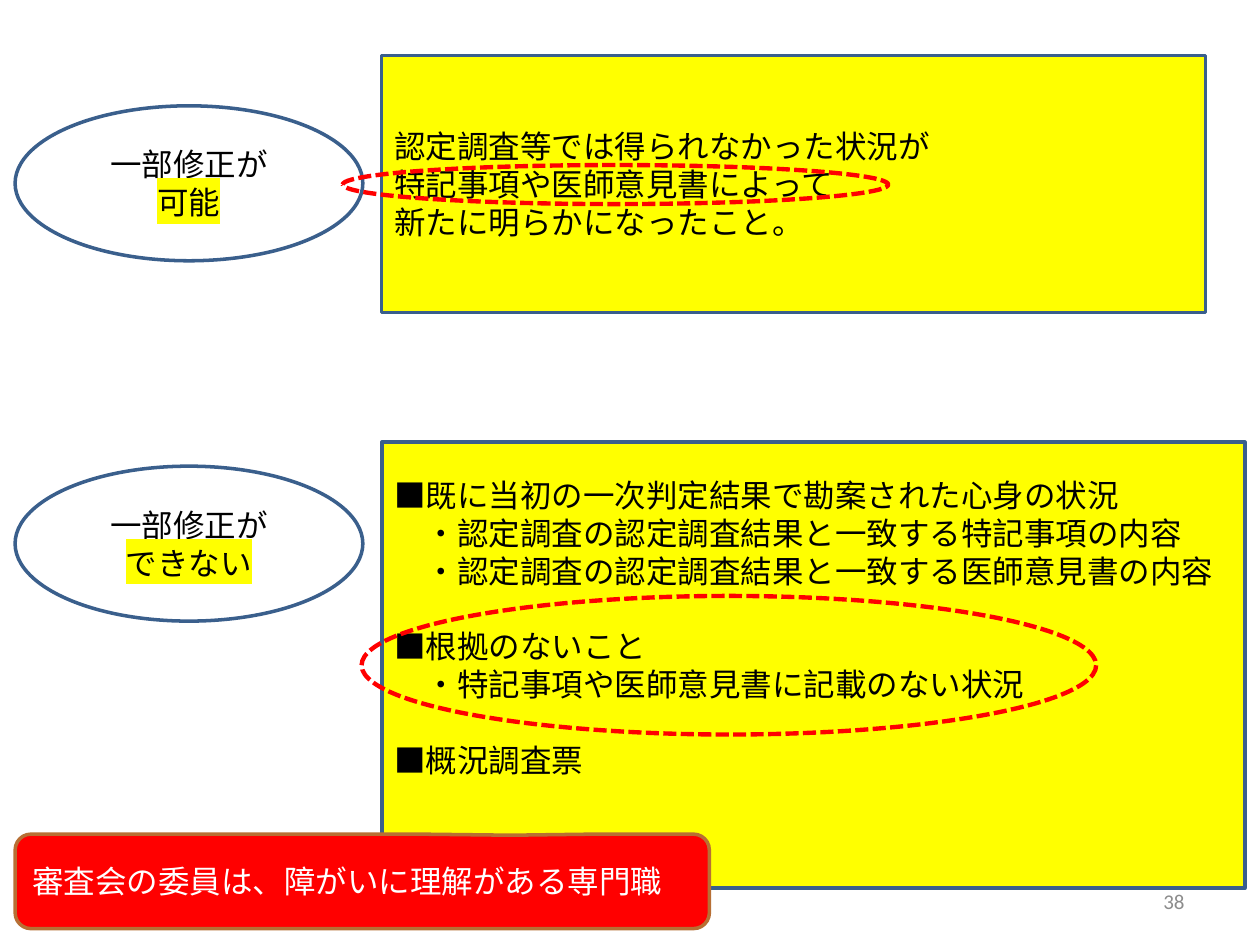
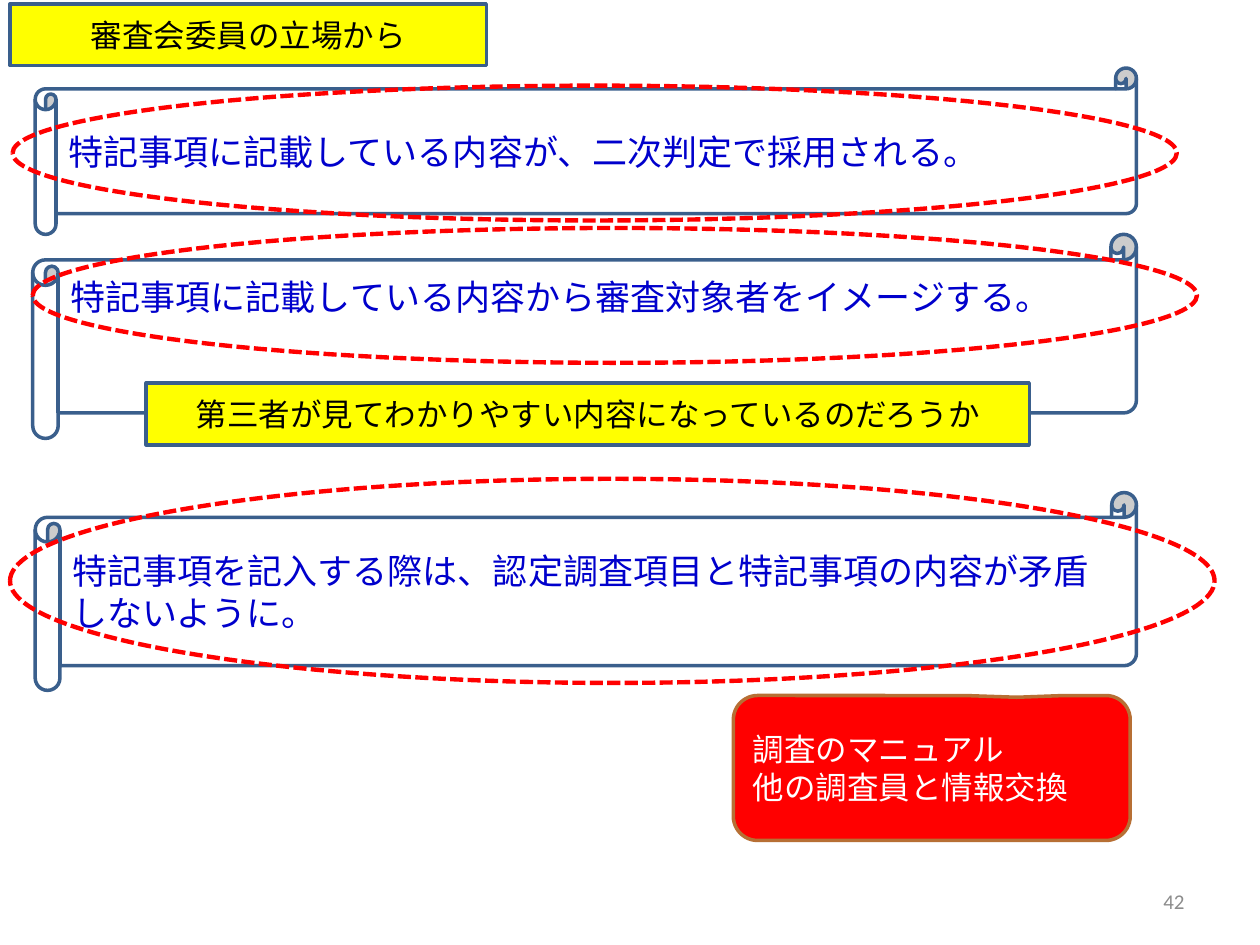
from dataclasses import dataclass

from lxml.etree import SubElement
from pptx import Presentation
from pptx.dml.color import RGBColor
from pptx.enum.dml import MSO_LINE
from pptx.enum.shapes import MSO_SHAPE as Shape
from pptx.enum.text import MSO_ANCHOR as Anchor, MSO_AUTO_SIZE as AutoSize, PP_ALIGN as Align
from pptx.oxml.ns import qn
from pptx.util import Inches, Pt

FONT = "Calibri"
COLORS = {
    "paper": "FFFFFF",
    "ink": "000000",
    "navy": "3A5F8C",
    "yellow": "FFFF00",
    "red": "FF0000",
    "brown": "B76F34",
    "blue": "0000CC",
    "gray": "8C8C8C",
}
LAYOUT_TITLE_ONLY, LAYOUT_BLANK = 5, 6
LINE_GAP = 21.6


@dataclass
class Line:
    text: str
    indent: float = 0
    gap: float = 0
    highlight: bool = False


def color(name):
    return RGBColor.from_string(COLORS[name])


def highlight(run):
    fill = run.font.fill._xPr.find(qn("a:solidFill"))
    mark = SubElement(run._r.rPr, qn("a:highlight"))
    SubElement(mark, qn("a:srgbClr")).set("val", COLORS["yellow"])
    fill.addnext(mark)


def write(frame, lines, ink="ink", size=18, align=Align.LEFT, bottom=0.05):
    frame.word_wrap = True
    frame.auto_size = AutoSize.NONE
    frame.vertical_anchor = Anchor.MIDDLE
    frame.margin_bottom = Inches(bottom)
    for number, line in enumerate(lines):
        if isinstance(line, str):
            line = Line(line)
        paragraph = frame.add_paragraph() if number else frame.paragraphs[0]
        paragraph.alignment = align
        if line.gap:
            paragraph.space_before = Pt(line.gap)
        if line.indent:
            paragraph._p.get_or_add_pPr().set("marL", str(Inches(line.indent)))
        run = paragraph.add_run()
        run.text = line.text
        run.font.size = Pt(size)
        run.font.color.rgb = color(ink)
        if line.highlight:
            highlight(run)
        run.font.name = FONT


def paint(shape, fill, outline="navy", width=2):
    if fill:
        shape.fill.solid()
        shape.fill.fore_color.rgb = color(fill)
    else:
        shape.fill.background()
    shape.line.color.rgb = color(outline)
    shape.line.width = Pt(width)


def add_figure(slide, kind, box, fill, outline="navy", width=2):
    figure = slide.shapes.add_shape(kind, *map(Inches, box))
    figure.shadow.inherit = False
    paint(figure, fill, outline, width)
    return figure


def add_verdict(slide, top, answer):
    verdict = add_figure(slide, Shape.OVAL, (0.12, top, 2.76, 1.23), "paper")
    write(verdict.text_frame, ["一部修正が", Line(answer, highlight=True)], align=Align.CENTER)


def add_panel(slide, box, lines, **style):
    panel = add_figure(slide, Shape.RECTANGLE, box, "yellow")
    write(panel.text_frame, lines, **style)


def add_scroll(slide, box, text, bottom=0.05):
    scroll = add_figure(slide, Shape.HORIZONTAL_SCROLL, box, "paper")
    write(scroll.text_frame, [text], "blue", 20, bottom=bottom)


def add_ring(slide, *box):
    ring = add_figure(slide, Shape.OVAL, box, None, "red", 2.5)
    ring.line.dash_style = MSO_LINE.SQUARE_DOT


def add_callout(slide, box, lines):
    callout = add_figure(slide, Shape.ROUNDED_RECTANGULAR_CALLOUT, box, "red", "brown")
    for index, value in enumerate((0.214, -0.488, 0.167)):
        callout.adjustments[index] = value
    write(callout.text_frame, lines, "paper")


def add_page_number(slide, number):
    footer = slide.shapes.add_textbox(Inches(7.17), Inches(6.95), Inches(2.33), Inches(0.4))
    write(footer.text_frame, [str(number)], "gray", 12, Align.RIGHT)


def set_title(slide, box, text):
    title = slide.shapes.title
    title.left, title.top, title.width, title.height = map(Inches, box)
    paint(title, "yellow")
    write(title.text_frame, [text], align=Align.CENTER)


def build_revision_rules(deck):
    slide = deck.slides.add_slide(deck.slide_layouts[LAYOUT_BLANK])
    add_verdict(slide, 0.84, "可能")
    add_panel(slide, (3.03, 0.44, 6.54, 2.04), [
        "認定調査等では得られなかった状況が",
        "特記事項や医師意見書によって",
        "新たに明らかになったこと。",
    ])
    add_verdict(slide, 3.7, "できない")
    add_panel(slide, (3.03, 3.51, 6.85, 3.54), [
        "■既に当初の一次判定結果で勘案された心身の状況",
        Line("・認定調査の認定調査結果と一致する特記事項の内容", indent=0.25),
        Line("・認定調査の認定調査結果と一致する医師意見書の内容", indent=0.25),
        Line("■根拠のないこと", gap=LINE_GAP),
        Line("・特記事項や医師意見書に記載のない状況", indent=0.25),
        Line("■概況調査票", gap=LINE_GAP),
    ], bottom=0.65)
    add_ring(slide, 2.72, 1.31, 4.33, 0.31)
    add_page_number(slide, 38)
    add_ring(slide, 2.87, 4.73, 5.83, 1.1)
    add_callout(slide, (0.12, 6.62, 5.51, 0.75), ["審査会の委員は、障がいに理解がある専門職"])


def build_committee_view(deck):
    slide = deck.slides.add_slide(deck.slide_layouts[LAYOUT_TITLE_ONLY])
    set_title(slide, (0.08, 0.03, 3.78, 0.49), "審査会委員の立場から")
    add_scroll(slide, (0.28, 0.54, 8.74, 1.32),
               "特記事項に記載している内容が、二次判定で採用される。")
    add_scroll(slide, (0.26, 1.86, 8.76, 1.62),
               "特記事項に記載している内容から審査対象者をイメージする。", bottom=0.68)
    add_panel(slide, (1.16, 3.04, 7.01, 0.49),
              ["第三者が見てわかりやすい内容になっているのだろうか"], align=Align.CENTER)
    add_scroll(slide, (0.28, 3.91, 8.74, 1.57),
               "特記事項を記入する際は、認定調査項目と特記事項の内容が矛盾しないように。")
    add_page_number(slide, 42)
    add_ring(slide, 0.26, 1.81, 9.24, 1.07)
    add_ring(slide, 0.1, 0.68, 9.24, 1.07)
    add_ring(slide, 0.08, 3.8, 9.56, 1.62)
    add_callout(slide, (5.82, 5.52, 3.15, 1.15), ["調査のマニュアル", "他の調査員と情報交換"])


def main():
    deck = Presentation()
    deck.slide_width, deck.slide_height = Inches(10), Inches(7.5)
    build_revision_rules(deck)
    build_committee_view(deck)
    deck.save("out.pptx")


if __name__ == "__main__":
    main()
